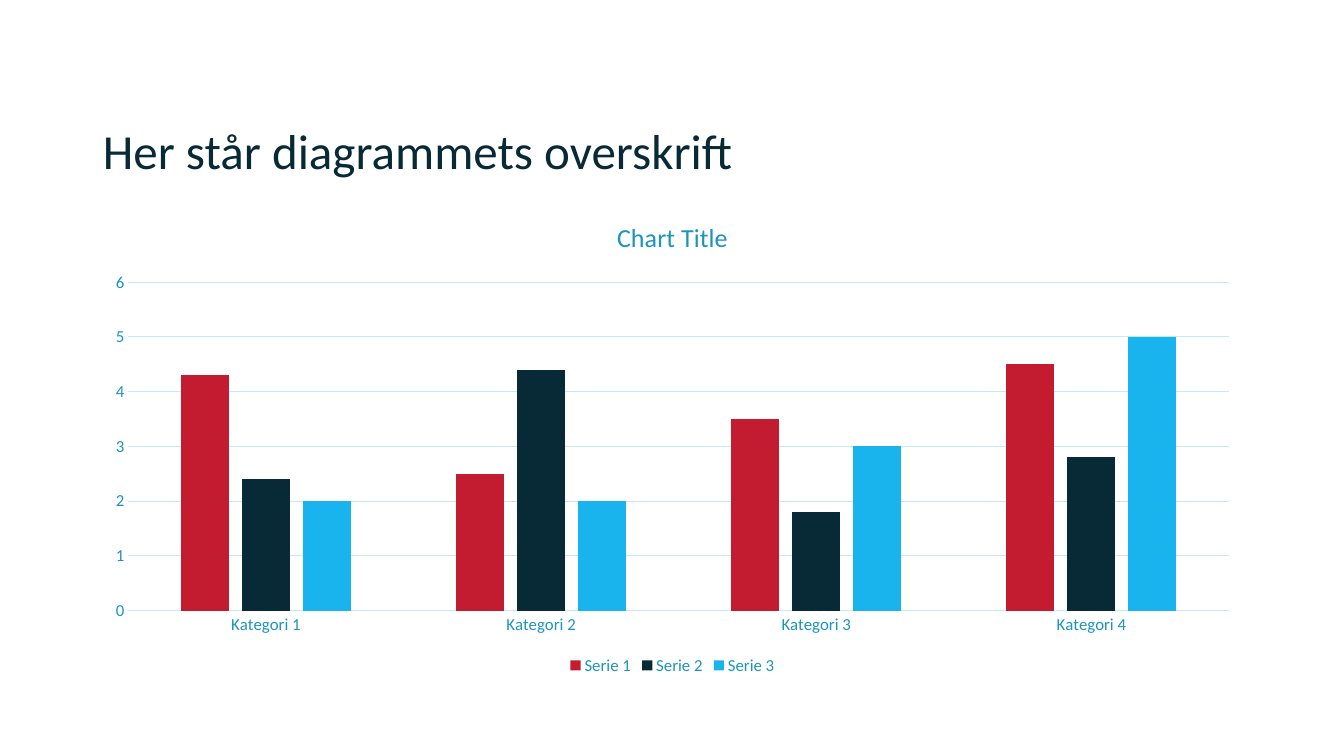
from pptx import Presentation
from pptx.chart.data import CategoryChartData
from pptx.dml.color import RGBColor
from pptx.enum.chart import XL_CHART_TYPE, XL_LEGEND_POSITION, XL_TICK_MARK
from pptx.enum.text import MSO_ANCHOR, PP_ALIGN
from pptx.util import Inches, Pt

COLUMNS = XL_CHART_TYPE.COLUMN_CLUSTERED
BOTTOM = XL_LEGEND_POSITION.BOTTOM
NO_TICKS = XL_TICK_MARK.NONE
MIDDLE = MSO_ANCHOR.MIDDLE
LEFT = PP_ALIGN.LEFT

FONT = "Calibri"
NAVY, TEAL, PALE = "082A36", "1C94BF", "C4E9F6"
SERIES = {
    "Serie 1": ("C31B2F", (4.3, 2.5, 3.5, 4.5)),
    "Serie 2": (NAVY, (2.4, 4.4, 1.8, 2.8)),
    "Serie 3": ("19B3EE", (2, 2, 3, 5)),
}


def color(value):
    return RGBColor.from_string(value)


def style_font(font, size, value):
    font.name, font.size, font.bold = FONT, Pt(size), False
    font.color.rgb = color(value)


prs = Presentation()
prs.slide_width, prs.slide_height = Inches(13.33), Inches(7.5)
slide = prs.slides.add_slide(prs.slide_layouts[5])
margin, content_width = Inches(0.92), Inches(11.5)

heading = slide.shapes.title
heading.left, heading.top = margin, Inches(0.8)
heading.width, heading.height = content_width, Inches(1.45)
heading.text_frame.text = "Her står diagrammets overskrift"
heading.text_frame.vertical_anchor = MIDDLE
heading_line = heading.text_frame.paragraphs[0]
heading_line.alignment, heading_line.line_spacing = LEFT, 0.9
style_font(heading_line.runs[0].font, 35, NAVY)

data = CategoryChartData()
data.categories = [f"Kategori {number}" for number in range(1, 5)]
for name, (_, values) in SERIES.items():
    data.add_series(name, values)
chart = slide.shapes.add_chart(
    COLUMNS, margin, Inches(1.98), content_width, Inches(4.76), data
).chart
style_font(chart.font, 10, NAVY)

chart.has_title = True
chart.chart_title.include_in_layout = False
chart_title = chart.chart_title.text_frame
chart_title.text = "Chart Title"
style_font(chart_title.paragraphs[0].runs[0].font, 18.6, TEAL)

chart.has_legend = True
chart.legend.position = BOTTOM
chart.legend.include_in_layout = False
style_font(chart.legend.font, 12, TEAL)

categories, scale = chart.category_axis, chart.value_axis
for axis in (categories, scale):
    axis.major_tick_mark = axis.minor_tick_mark = NO_TICKS
    style_font(axis.tick_labels.font, 12, TEAL)
scale.minimum_scale, scale.maximum_scale, scale.major_unit = 0, 6, 1
scale.has_major_gridlines = True
scale.format.line.fill.background()
for line in (categories.format.line, scale.major_gridlines.format.line):
    line.color.rgb = color(PALE)
    line.width = Pt(0.75)

plot = chart.plots[0]
plot.gap_width, plot.overlap, plot.vary_by_categories = 219, -27, False
for series, (fill, _) in zip(plot.series, SERIES.values()):
    series.format.fill.solid()
    series.format.fill.fore_color.rgb = color(fill)

prs.save("out.pptx")
